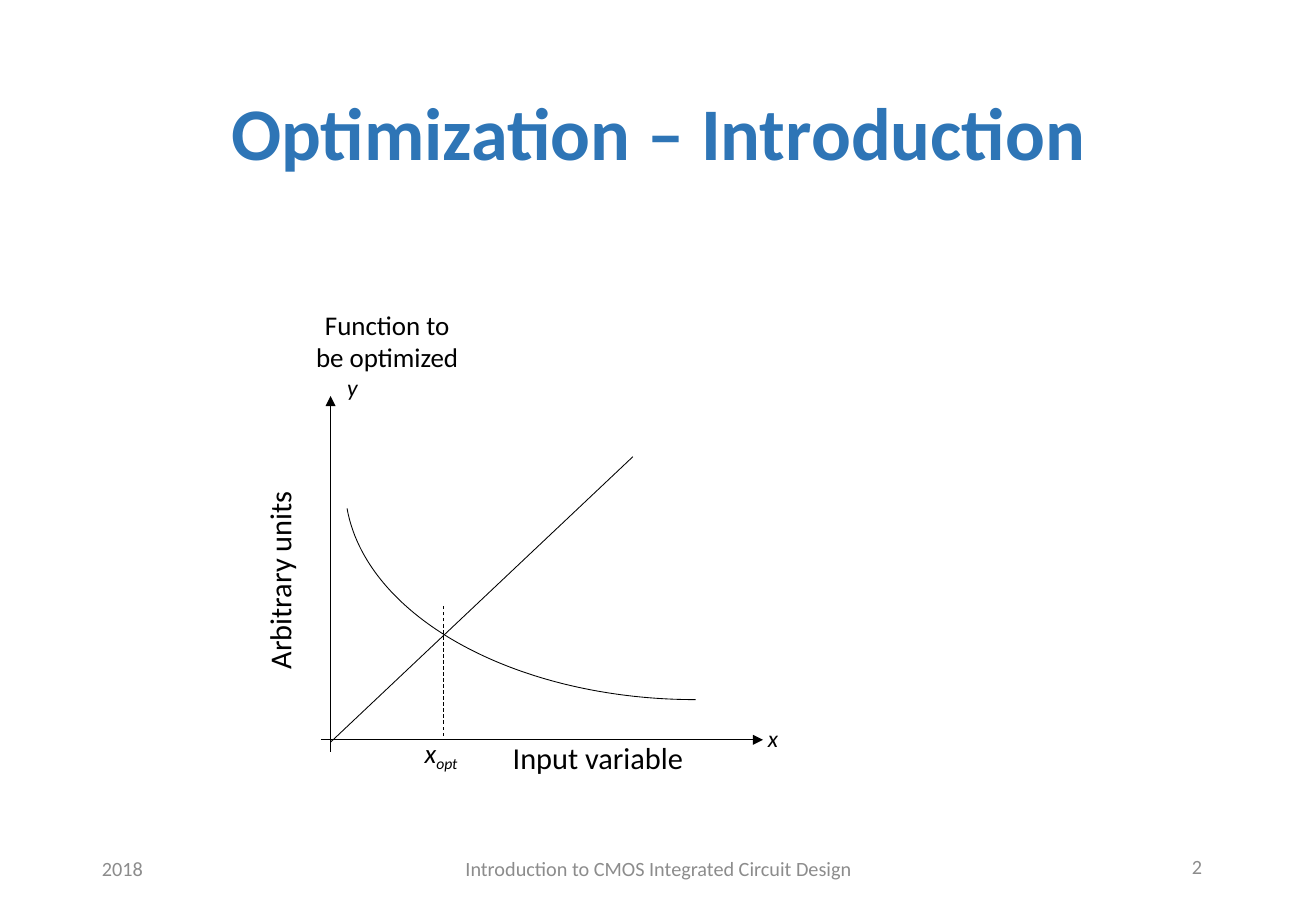
from lxml import etree
from pptx import Presentation
from pptx import util as u
from pptx.dml.color import RGBColor
from pptx.enum import dml, shapes, text
from pptx.oxml.ns import qn

Cm, Pt = u.Cm, u.Pt
BLACK = RGBColor(0, 0, 0)
GRAY = RGBColor(0x8C, 0x8C, 0x8C)
BLUE = RGBColor(0x2E, 0x75, 0xB6)
LEFT, MID, RIGHT = text.PP_ALIGN.LEFT, text.PP_ALIGN.CENTER, text.PP_ALIGN.RIGHT

# Lengths in cm: left, top, width, height
FOOT = [
    ("2018", (1.88, 17.65, 6.2, 1.02), LEFT),
    ("Introduction to CMOS Integrated Circuit Design", (9.12, 17.65, 9.3, 1.02), MID),
    ("2", (19.18, 17.6, 6.2, 1.02), RIGHT),
]
TITLE = ("Optimization – Introduction", (1.78, 1.02, 23.98, 3.68))
GOAL = ("Function to\nbe optimized", (5.72, 6.45, 4.75, 1.52))
LABELS = [
    ("x", (15.65, 15.16, 1.02, 1.07), dict(size=14, italic=True)),
    ("y", (6.86, 7.82, 1.02, 1.07), dict(size=14, italic=True)),
    ("x", (8.71, 15.6, 1.02, 1.07), dict(size=16, italic=True, sub="opt")),
    ("Input variable", (9.91, 15.65, 5.18, 1.09), dict(size=18)),
    ("Arbitrary units", (3.61, 11.6, 5.16, 1.07), dict(size=18, turn=270)),
]
# Start x, start y, end x, end y
LINES = [
    ((6.91, 15.72, 6.91, 8.28), dict(arrow=True)),
    ((6.71, 15.47, 15.95, 15.47), dict(arrow=True)),
    ((6.91, 15.52, 13.23, 9.55), {}),
    ((9.27, 15.39, 9.27, 12.67), dict(dash=True)),
]
CURVE = (7.21, 5.66, 14.66, 8.97)
SWEEP = (162, 213.7)


def write(slide, words, box, size=16, color=BLACK, bold=False, italic=False,
          align=MID, gap=None, inset=True, middle=False, sub="", turn=0):
    """Add a text box; sub is a subscript after the last line."""
    shape = slide.shapes.add_textbox(*map(Cm, box))
    shape.rotation = turn
    frame = shape.text_frame
    frame.word_wrap = True
    if middle:
        frame.vertical_anchor = text.MSO_ANCHOR.MIDDLE
    if not inset:
        frame.margin_left = frame.margin_right = 0
        frame.margin_top = frame.margin_bottom = 0
    for i, row in enumerate(words.split("\n")):
        para = frame.paragraphs[0] if i == 0 else frame.add_paragraph()
        para.alignment = align
        if gap:
            para.line_spacing = gap
        para.add_run().text = row
    if sub:
        run = para.add_run()
        run.text = sub
        run.font._element.set("baseline", "-25000")
    for para in frame.paragraphs:
        for run in para.runs:
            font = run.font
            font.name, font.size = "Calibri", Pt(size)
            font.bold, font.italic = bold, italic
            font.color.rgb = color


def ink(shape):
    shape.line.color.rgb = BLACK
    shape.line.width = Pt(0.5)


def draw(slide, ends, arrow=False, dash=False):
    line = slide.shapes.add_connector(shapes.MSO_CONNECTOR.STRAIGHT, *map(Cm, ends))
    ink(line)
    if dash:
        line.line.dash_style = dml.MSO_LINE.DASH
    if arrow:
        etree.SubElement(line.get_or_add_ln(), qn("a:tailEnd"), type="triangle")
    etree.SubElement(line._element.spPr, qn("a:effectLst"))


def curve(slide):
    arc = slide.shapes.add_shape(shapes.MSO_SHAPE.ARC, *map(Cm, CURVE))
    arc.rotation = 180
    arc.shadow.inherit = False
    arc.fill.background()
    ink(arc)
    for i, angle in enumerate(SWEEP):
        arc.adjustments[i] = angle


def main():
    deck = Presentation()
    deck.slide_width, deck.slide_height = Cm(27.51), Cm(19.05)
    slide = deck.slides.add_slide(deck.slide_layouts[6])
    for words, box, align in FOOT:
        write(slide, words, box, size=12, color=GRAY, align=align, middle=True)
    write(slide, *TITLE, size=44, color=BLUE, bold=True, gap=0.9, middle=True)
    write(slide, *GOAL, inset=False)
    for ends, style in LINES:
        draw(slide, ends, **style)
    curve(slide)
    for words, box, style in LABELS:
        write(slide, words, box, gap=Pt(16), inset=False, **style)
    deck.save("out.pptx")


if __name__ == "__main__":
    main()
